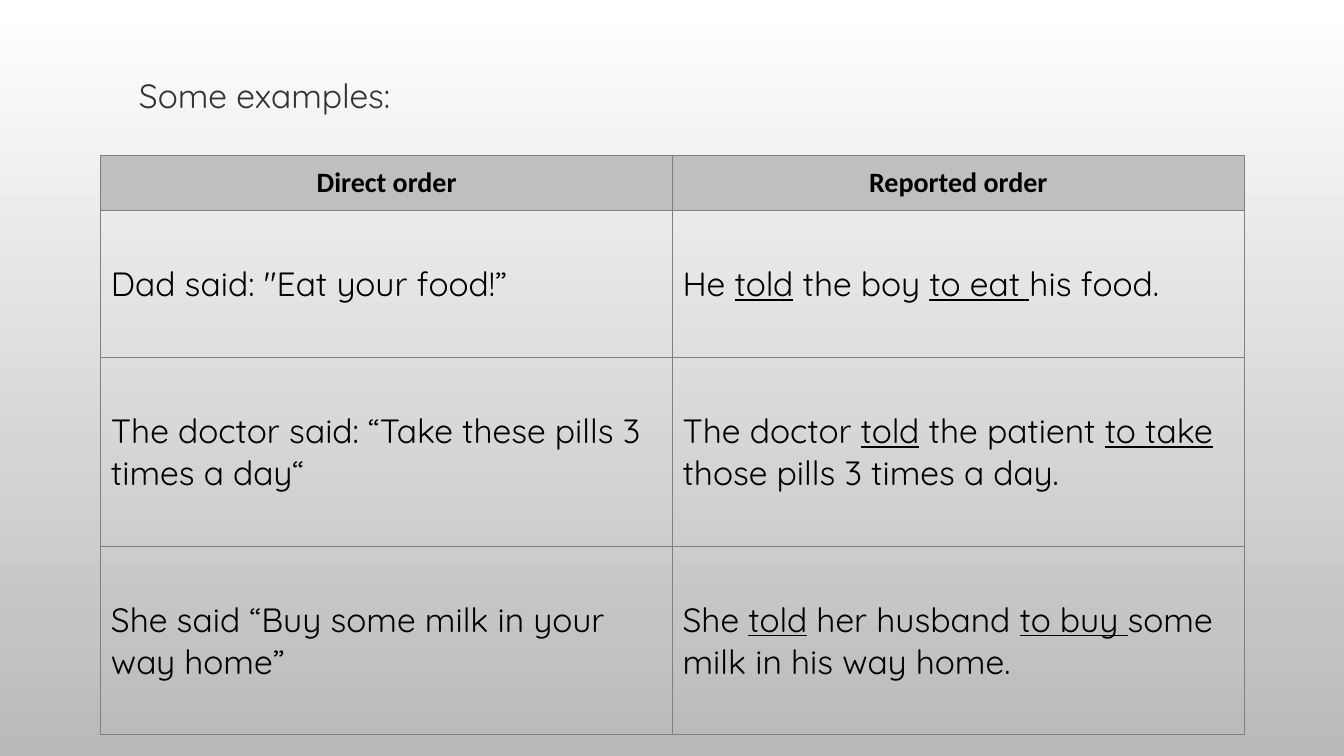
from lxml.etree import SubElement
from pptx import Presentation
from pptx.dml.color import RGBColor
from pptx.enum.text import MSO_ANCHOR, PP_ALIGN
from pptx.oxml.ns import qn
from pptx.util import Inches, Pt

COLORS = {
    "top": "FFFFFF",
    "bottom": "B9B9B9",
    "header": "BFBFBF",
    "border": "808080",
    "text": "000000",
    "title": "333333",
}
ROWS = [
    ("Direct order", "Reported order"),
    ("Dad said: \"Eat your food!”", "He _told_ the boy _to eat _his food."),
    ("The doctor said: “Take these pills 3 times a day“",
     "The doctor _told_ the patient _to take _those pills 3 times a day."),
    ("She said “Buy some milk in your way home”",
     "She _told_ her husband _to buy _some milk in his way home."),
]
ROW_HEIGHTS = [0.55, 1.46, 1.87, 1.87]
COLUMN_WIDTH = 5.67


def rgb(name):
    return RGBColor.from_string(COLORS[name])


def write(frame, text, size=24, font="Quicksand", color="text", bold=False,
          align=PP_ALIGN.LEFT):
    """Fill the frame with text; parts between underscores are underlined."""
    paragraph = frame.paragraphs[0]
    paragraph.alignment = align
    for index, part in enumerate(text.split("_")):
        run = paragraph.add_run()
        run.text = part
        run.font.size = Pt(size)
        run.font.name = font
        run.font.bold = bold
        run.font.underline = index % 2 == 1
        run.font.color.rgb = rgb(color)


def add_borders(cell, width=0.75):
    properties = cell._tc.get_or_add_tcPr()
    for side in ("lnL", "lnR", "lnT", "lnB"):
        line = SubElement(properties, qn(f"a:{side}"), w=str(Pt(width)))
        fill = SubElement(line, qn("a:solidFill"))
        SubElement(fill, qn("a:srgbClr"), val=COLORS["border"])


class ExamplesSlide:
    def __init__(self, presentation):
        self.slide = presentation.slides.add_slide(presentation.slide_layouts[6])

    def background(self):
        fill = self.slide.background.fill
        fill.gradient()
        fill.gradient_angle = 270
        for stop, name, position in zip(fill.gradient_stops, ("top", "bottom"), (0, 1)):
            stop.color.rgb = rgb(name)
            stop.position = position

    def table(self, left, top, rows):
        frame = self.slide.shapes.add_table(
            len(rows), len(rows[0]), Inches(left), Inches(top),
            Inches(COLUMN_WIDTH * len(rows[0])), Inches(sum(ROW_HEIGHTS)))
        orders = frame.table
        orders.first_row = orders.horz_banding = False
        for column in orders.columns:
            column.width = Inches(COLUMN_WIDTH)
        for row_index, texts in enumerate(rows):
            orders.rows[row_index].height = Inches(ROW_HEIGHTS[row_index])
            for column_index, text in enumerate(texts):
                self.cell(orders.cell(row_index, column_index), text, row_index == 0)

    def cell(self, cell, text, is_header):
        cell.margin_left = cell.margin_right = Inches(0.1)
        cell.margin_top = cell.margin_bottom = Inches(0.1)
        cell.vertical_anchor = MSO_ANCHOR.MIDDLE
        add_borders(cell)
        if is_header:
            cell.fill.solid()
            cell.fill.fore_color.rgb = rgb("header")
            write(cell.text_frame, text, size=20, font="Calibri", bold=True,
                  align=PP_ALIGN.CENTER)
        else:
            cell.fill.background()
            write(cell.text_frame, text)

    def text(self, left, top, width, height, text, **style):
        box = self.slide.shapes.add_textbox(
            Inches(left), Inches(top), Inches(width), Inches(height))
        box.text_frame.word_wrap = True
        box.text_frame.vertical_anchor = MSO_ANCHOR.MIDDLE
        write(box.text_frame, text, **style)


def main():
    presentation = Presentation()
    presentation.slide_width = Inches(13.33)
    presentation.slide_height = Inches(7.5)
    examples = ExamplesSlide(presentation)
    examples.background()
    examples.table(1, 1.54, ROWS)
    examples.text(1.28, 0.69, 2.97, 0.5, "Some examples:", color="title")
    presentation.save("out.pptx")


if __name__ == "__main__":
    main()
